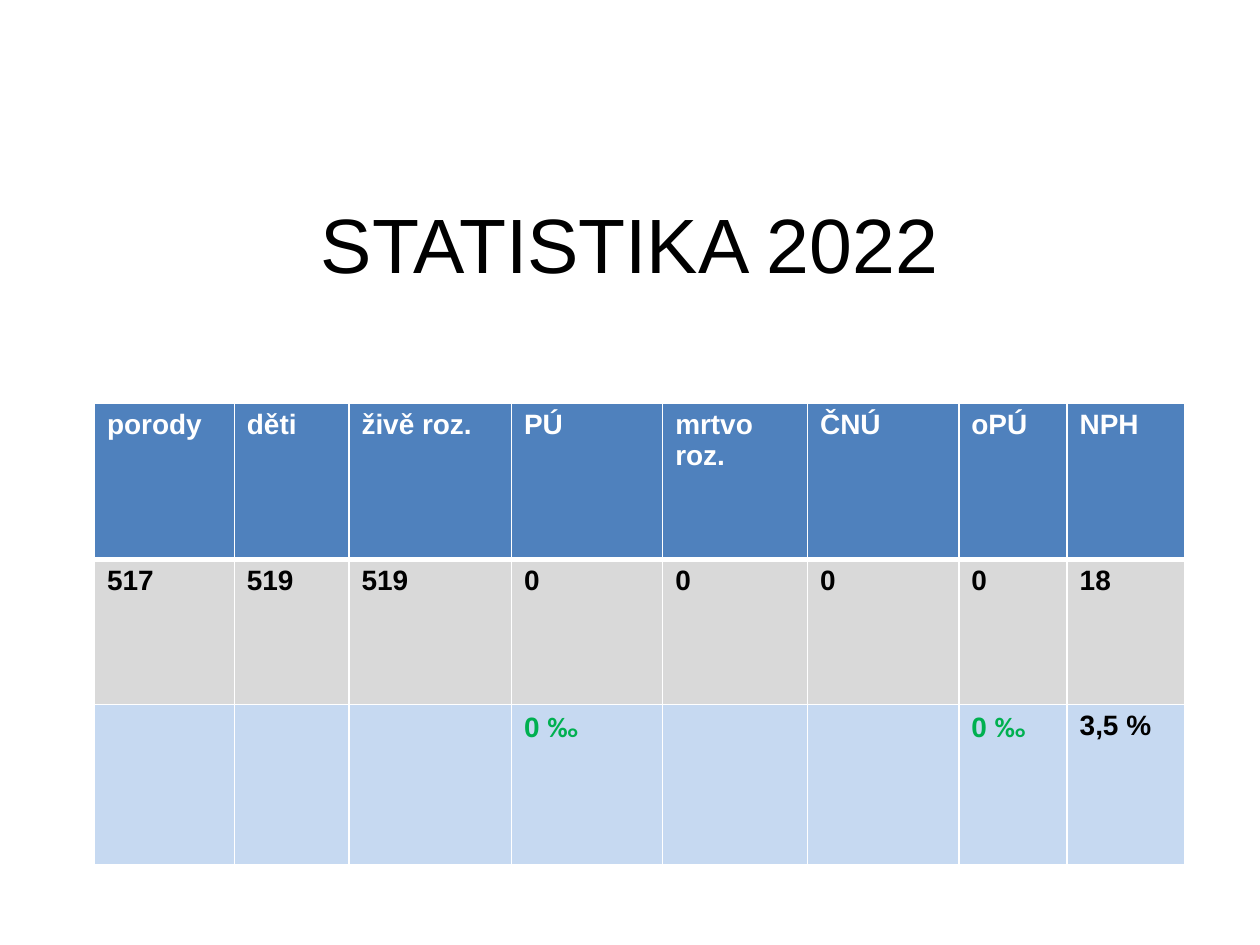
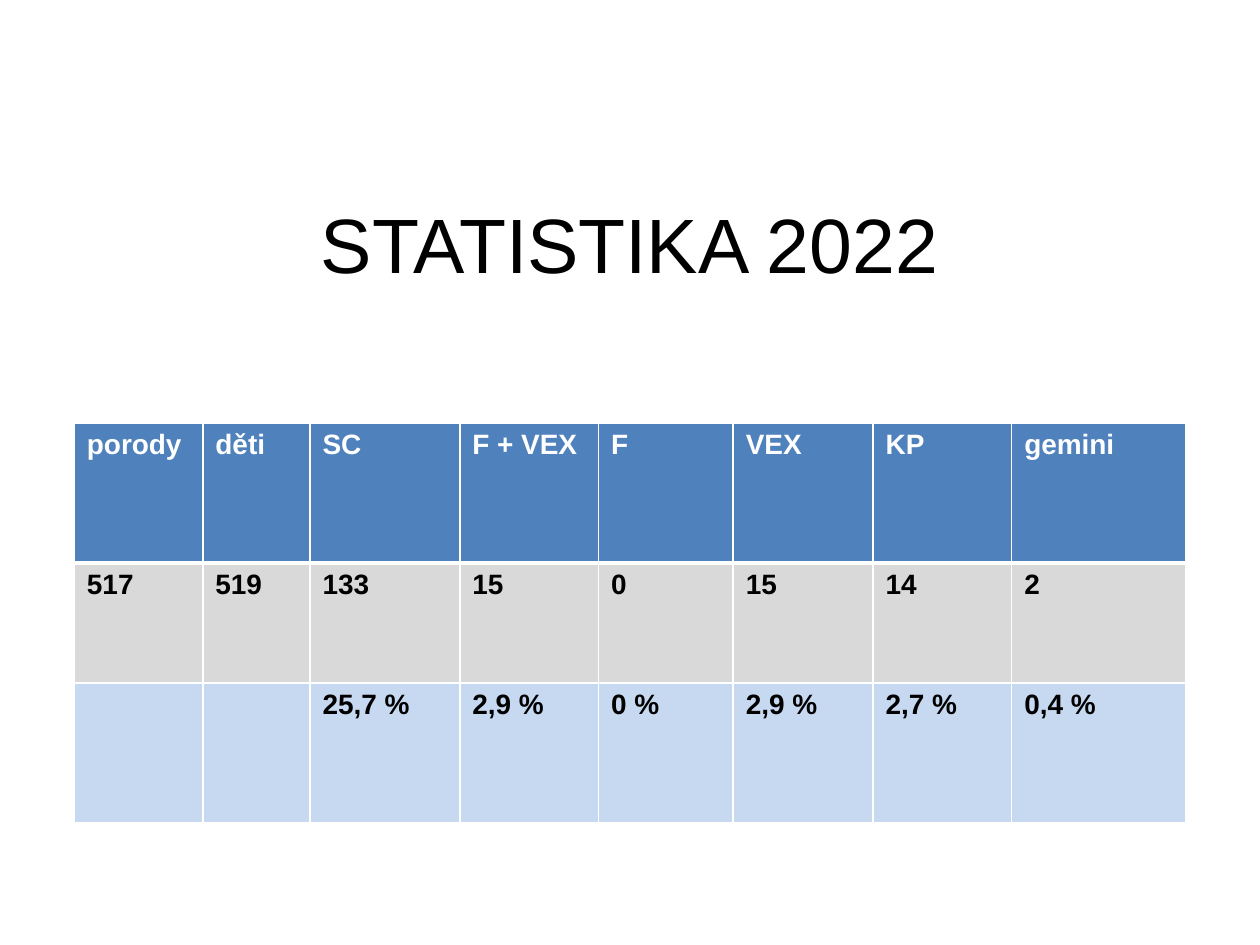
from lxml import etree
from pptx import Presentation, util as u
from pptx.dml.color import RGBColor
from pptx.enum import text
from pptx.oxml import ns

PX = 9144  # EMU in one px, at 100 px to the inch
WHITE, BLACK, GREEN = "FFFFFF", "000000", "00B050"
ROW_FILLS = ["4F81BD", "D9D9D9", "C6D9F1"]
ROW_INKS = [WHITE, BLACK, BLACK]
FONT = "Arial"
# The per-mille sign is set from three pieces: text, font, size.
PER_MILLE = [("0 ", FONT, 16), ("%", "Calibri", 16), ("o", "Montserrat", 9)]


def px(length):
    return u.Emu(length * PX)


def color(value):
    return RGBColor.from_string(value)


class Deck:
    def __init__(self, width, height):
        self.deck = Presentation()
        self.deck.slide_width, self.deck.slide_height = px(width), px(height)
        self.page = None

    def new_page(self):
        self.page = self.deck.slides.add_slide(self.deck.slide_layouts[6])

    def style(self, span, ink, size, font=FONT, bold=False):
        span.font.name, span.font.size = font, u.Pt(size)
        span.font.bold = bold
        span.font.color.rgb = color(ink)

    def title(self, words):
        box = self.page.shapes.add_textbox(px(75), px(21), px(850), px(373))
        frame = box.text_frame
        frame.word_wrap = True
        frame.vertical_anchor = text.MSO_ANCHOR.MIDDLE
        frame.margin_bottom = px(34)
        frame.text = words
        para = frame.paragraphs[0]
        para.alignment = text.PP_ALIGN.CENTER
        self.style(para.runs[0], BLACK, 44)

    def borders(self, cell, top, bottom):
        """Draw white cell borders; top and bottom are widths in points."""
        props = cell._tc.get_or_add_tcPr()
        sides = {"lnL": 1, "lnR": 1, "lnT": top, "lnB": bottom}
        for place, (side, width) in enumerate(sides.items()):
            line = etree.Element(ns.qn(f"a:{side}"), w=str(u.Pt(width)))
            fill = etree.SubElement(line, ns.qn("a:solidFill"))
            etree.SubElement(fill, ns.qn("a:srgbClr"), val=WHITE)
            props.insert(place, line)

    def write_cell(self, cell, content, ink):
        frame = cell.text_frame
        if content is PER_MILLE:
            for words, font, size in content:
                span = frame.paragraphs[0].add_run()
                span.text = words
                self.style(span, GREEN, size, font, bold=True)
            return
        frame.text = content
        for para in frame.paragraphs:
            for span in para.runs:
                self.style(span, ink, 16, bold=True)

    def table(self, left, top, widths, heights, rows):
        table = self.page.shapes.add_table(
            len(rows), len(widths), px(left), px(top),
            px(sum(widths)), px(sum(heights))).table
        table.horz_banding = False
        for column, width in zip(table.columns, widths):
            column.width = px(width)
        for r, contents in enumerate(rows):
            table.rows[r].height = px(heights[r])
            for c, content in enumerate(contents):
                cell = table.cell(r, c)
                cell.fill.solid()
                cell.fill.fore_color.rgb = color(ROW_FILLS[r])
                self.borders(cell, top=3 if r == 1 else 1,
                             bottom=3 if r == 0 else 1)
                self.write_cell(cell, content, ROW_INKS[r])


BIRTHS = dict(
    left=75, top=320,
    widths=[111, 91, 129, 120, 115, 120, 86, 93],
    heights=[124, 115, 127],
    rows=[
        ["porody", "děti", "živě roz.", "PÚ", "mrtvo\nroz.", "ČNÚ", "oPÚ", "NPH"],
        ["517", "519", "519", "0", "0", "0", "0", "18"],
        ["", "", "", PER_MILLE, "", "", PER_MILLE, "3,5 %"],
    ])

DELIVERIES = dict(
    left=59, top=336,
    widths=[102, 85, 119, 110, 107, 111, 110, 138],
    heights=[111, 95, 111],
    rows=[
        ["porody", "děti", "SC", "F + VEX", "F", "VEX", "KP", "gemini"],
        ["517", "519", "133", "15", "0", "15", "14", "2"],
        ["", "", "25,7 %", "2,9 %", "0 %", "2,9 %", "2,7 %", "0,4 %"],
    ])


def main():
    statistics = Deck(1000, 750)
    for figures in (BIRTHS, DELIVERIES):
        statistics.new_page()
        statistics.title("STATISTIKA 2022")
        statistics.table(**figures)
    statistics.deck.save("out.pptx")


if __name__ == "__main__":
    main()
